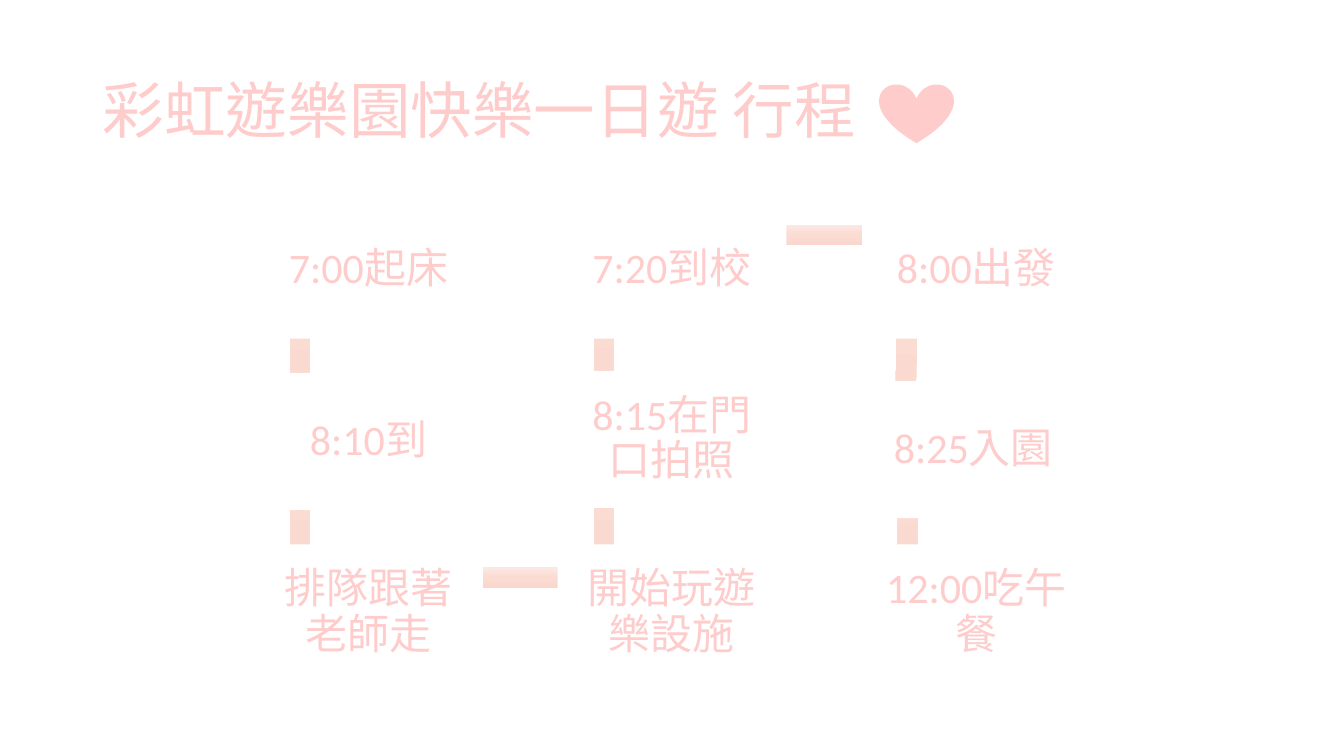
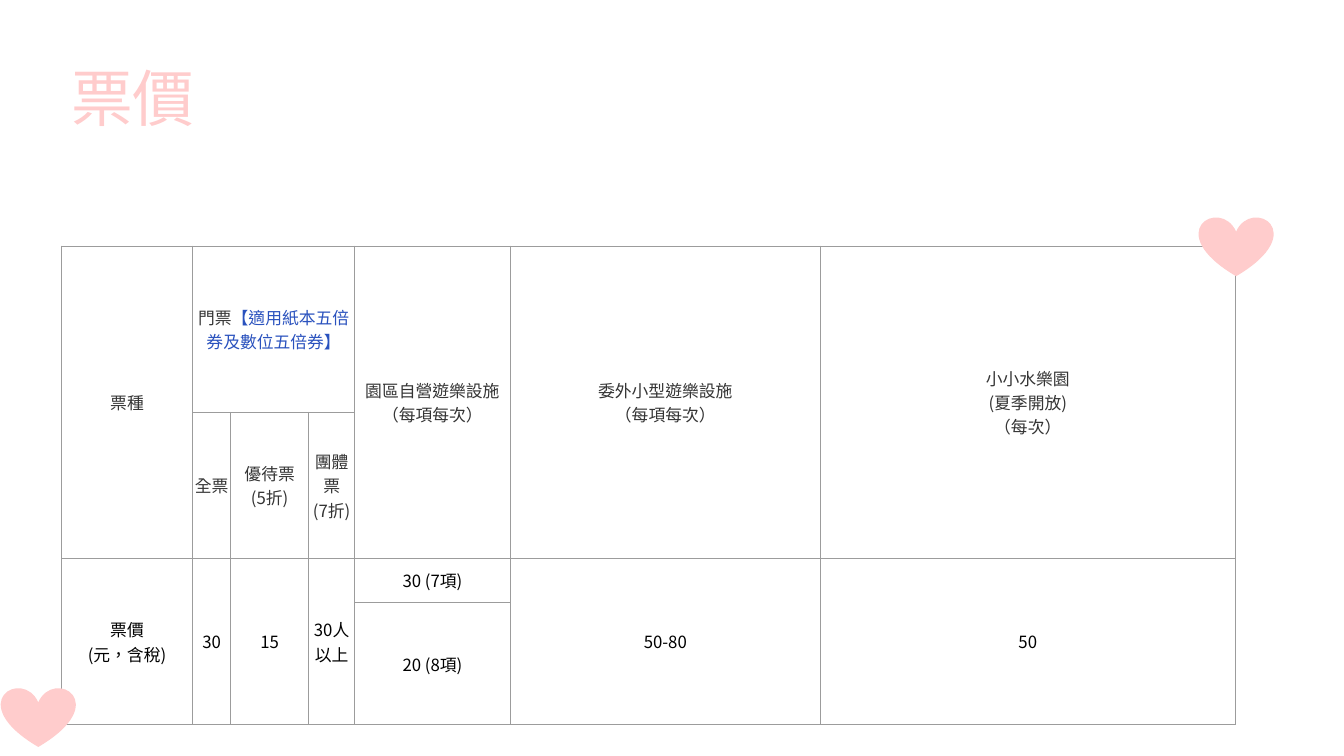
from copy import deepcopy
from dataclasses import dataclass
from math import atan, degrees, hypot

from lxml import etree
from pptx import Presentation
from pptx.dml.color import RGBColor
from pptx.enum.lang import MSO_LANGUAGE_ID
from pptx.enum.shapes import MSO_SHAPE
from pptx.enum.text import MSO_ANCHOR, PP_ALIGN
from pptx.oxml.ns import qn
from pptx.util import Inches, Pt

ROUND_RECT = MSO_SHAPE.ROUNDED_RECTANGLE
RECT = MSO_SHAPE.RECTANGLE
HEART = MSO_SHAPE.HEART
MIDDLE = MSO_ANCHOR.MIDDLE
CENTER = PP_ALIGN.CENTER
CHINESE = MSO_LANGUAGE_ID.TRADITIONAL_CHINESE


@dataclass(frozen=True)
class Theme:
    pink: str = "FFCCCC"
    white: str = "FFFFFF"
    bar: tuple = ((0, "FCE8E2"), (0.5, "FADCD3"), (1, "FAD7CC"))
    border: str = "9C9C9C"
    header: str = "343434"
    offer: str = "2A52BE"
    price: str = "000000"
    cjk: str = "Noto Sans CJK JP"
    latin: str = "Calibri"
    title_size: int = 44
    card_size: int = 30
    table_size: int = 12
    border_width: float = 0.75
    line_spacing: float = 0.9


class Deck:
    CARD_SIZE = (2.27, 1.36)
    BAR_ANCHOR = (0.46, 0.33)
    BAR_THICKNESS = 0.2
    HEART_SIZE = (0.74, 0.59)

    def __init__(self, theme):
        self.theme = theme
        self.prs = Presentation()
        self.prs.slide_width = Inches(13.33)
        self.prs.slide_height = Inches(7.5)
        self.slide = None

    def new_slide(self, title, left, top):
        self.slide = self.prs.slides.add_slide(self.prs.slide_layouts[6])
        box = self.slide.shapes.add_textbox(
            Inches(left), Inches(top), Inches(11.5), Inches(1.45))
        frame = box.text_frame
        frame.word_wrap = True
        frame.vertical_anchor = MIDDLE
        heading = frame.paragraphs[0]
        heading.line_spacing = self.theme.line_spacing
        self.text(heading, title, self.theme.title_size, self.theme.pink)

    def text(self, paragraph, words, size, color, face=None):
        for index, line in enumerate(words.split("\n")):
            if index:
                paragraph.add_line_break()
            run = paragraph.add_run()
            run.text = line
            font = run.font
            font.size = Pt(size)
            font.name = face or self.theme.cjk
            font.color.rgb = RGBColor.from_string(color)
            font.language_id = CHINESE
            east_asian = etree.SubElement(run._r.get_or_add_rPr(), qn("a:ea"))
            east_asian.set("typeface", self.theme.cjk)

    def shape(self, kind, left, top, width, height, color=None):
        item = self.slide.shapes.add_shape(
            kind, Inches(left), Inches(top), Inches(width), Inches(height))
        item.shadow.inherit = False
        item.line.fill.background()
        if color:
            item.fill.solid()
            item.fill.fore_color.rgb = RGBColor.from_string(color)
        return item

    def heart(self, left, top):
        self.shape(HEART, left, top, *self.HEART_SIZE, self.theme.pink)

    def card(self, left, top, words):
        card = self.shape(ROUND_RECT, left, top, *self.CARD_SIZE, self.theme.white)
        card.adjustments[0] = 0.1
        frame = card.text_frame
        frame.word_wrap = True
        frame.vertical_anchor = MIDDLE
        frame.margin_left = frame.margin_right = Inches(0.12)
        frame.margin_top = frame.margin_bottom = Inches(0.12)
        paragraph = frame.paragraphs[0]
        paragraph.alignment = CENTER
        paragraph.line_spacing = self.theme.line_spacing
        self.text(paragraph, words, self.theme.card_size, self.theme.pink,
                  self.theme.latin)

    def bar(self, start, end):
        dx, dy = end[0] - start[0], end[1] - start[1]
        length = hypot(dx, dy)
        upright = abs(dy) > abs(dx)
        width, height = self.BAR_THICKNESS, length
        if not upright:
            width, height = height, width
        center_x = start[0] + dx / 2 + self.BAR_ANCHOR[0]
        center_y = start[1] + dy / 2 + self.BAR_ANCHOR[1]
        bar = self.shape(RECT, center_x - width / 2, center_y - height / 2,
                         width, height)
        bar.rotation = -degrees(atan(dx / dy)) if upright else 0
        bar.fill.gradient()
        bar.fill.gradient_angle = 270
        stop_list = bar._element.spPr.find(".//" + qn("a:gsLst"))
        stop_list.insert(1, deepcopy(stop_list[0]))
        for stop, (position, color) in zip(bar.fill.gradient_stops, self.theme.bar):
            stop.position = position
            stop.color.rgb = RGBColor.from_string(color)

    def route(self, stops):
        following = stops[1:] + [None]
        for (left, top, words), after in zip(stops, following):
            if after:
                self.bar((left, top), after[:2])
            self.card(left, top, words)

    def cell_frame(self, cell):
        properties = cell._tc.get_or_add_tcPr()
        for side in ("a:lnL", "a:lnR", "a:lnT", "a:lnB"):
            edge = etree.SubElement(properties, qn(side))
            edge.set("w", str(Pt(self.theme.border_width)))
            fill = etree.SubElement(edge, qn("a:solidFill"))
            etree.SubElement(fill, qn("a:srgbClr")).set("val", self.theme.border)
        cell.fill.background()
        cell.vertical_anchor = MIDDLE
        cell.margin_left = cell.margin_right = Inches(0.02)
        cell.margin_top = cell.margin_bottom = Inches(0.02)

    def table(self, left, top, widths, heights, entries):
        grid = self.slide.shapes.add_table(
            len(heights), len(widths), Inches(left), Inches(top),
            Inches(sum(widths)), Inches(sum(heights))).table
        grid.first_row = grid.horz_banding = False
        for column, width in zip(grid.columns, widths):
            column.width = Inches(width)
        for row, height in zip(grid.rows, heights):
            row.height = Inches(height)
        for cell in grid.iter_cells():
            self.cell_frame(cell)
        for row, column, row_span, column_span, color, words, *offer in entries:
            cell = grid.cell(row, column)
            if row_span * column_span > 1:
                cell.merge(grid.cell(row + row_span - 1, column + column_span - 1))
            paragraph = cell.text_frame.paragraphs[0]
            paragraph.alignment = CENTER
            self.text(paragraph, words, self.theme.table_size, color)
            for extra in offer:
                self.text(paragraph, extra, self.theme.table_size, self.theme.offer)


def schedule(deck):
    deck.new_slide("彩虹遊樂園快樂一日遊 行程", 0.92, 0.4)
    first, second, third = 2.52, 5.53, 8.55
    upper, lower = 2, 5.4
    deck.route([
        (first, upper, "7:00起床"),
        (first, 3.7, "8:10到"),
        (first, lower, "排隊跟著老師走"),
        (second, lower, "開始玩遊樂設施"),
        (second, 3.68, "8:15在門口拍照"),
        (second, upper, "7:20到校"),
        (third, upper, "8:00出發"),
        (8.52, 3.78, "8:25入園"),
        (third, lower, "12:00吃午餐"),
    ])
    deck.heart(8.72, 0.83)


def prices(deck):
    header, price = deck.theme.header, deck.theme.price
    deck.new_slide("票價", 0.61, 0.28)
    deck.table(
        0.61, 2.44,
        [1.3, 0.38, 0.77, 0.46, 1.54, 3.08, 4.11],
        [1.65, 1.45, 0.44, 1.21],
        [
            (0, 0, 2, 1, header, "票種"),
            (0, 1, 1, 3, header, "門票", "【適用紙本五倍券及數位五倍券】"),
            (0, 4, 2, 1, header, "園區自營遊樂設施\n（每項每次）"),
            (0, 5, 2, 1, header, "委外小型遊樂設施\n（每項每次）"),
            (0, 6, 2, 1, header, "小小水樂園\n(夏季開放)\n（每次）"),
            (1, 1, 1, 1, header, "全票"),
            (1, 2, 1, 1, header, "優待票\n(5折)"),
            (1, 3, 1, 1, header, "團體票\n(7折)"),
            (2, 0, 2, 1, price, "票價\n(元，含稅)"),
            (2, 1, 2, 1, price, "30"),
            (2, 2, 2, 1, price, "15"),
            (2, 3, 2, 1, price, "30人\n以上"),
            (2, 4, 1, 1, price, "30 (7項)"),
            (2, 5, 2, 1, price, "50-80"),
            (2, 6, 2, 1, price, "50"),
            (3, 4, 1, 1, price, "20 (8項)"),
        ])
    deck.heart(11.89, 2.15)
    deck.heart(0.01, 6.82)


def main():
    deck = Deck(Theme())
    schedule(deck)
    prices(deck)
    deck.prs.save("out.pptx")


if __name__ == "__main__":
    main()
